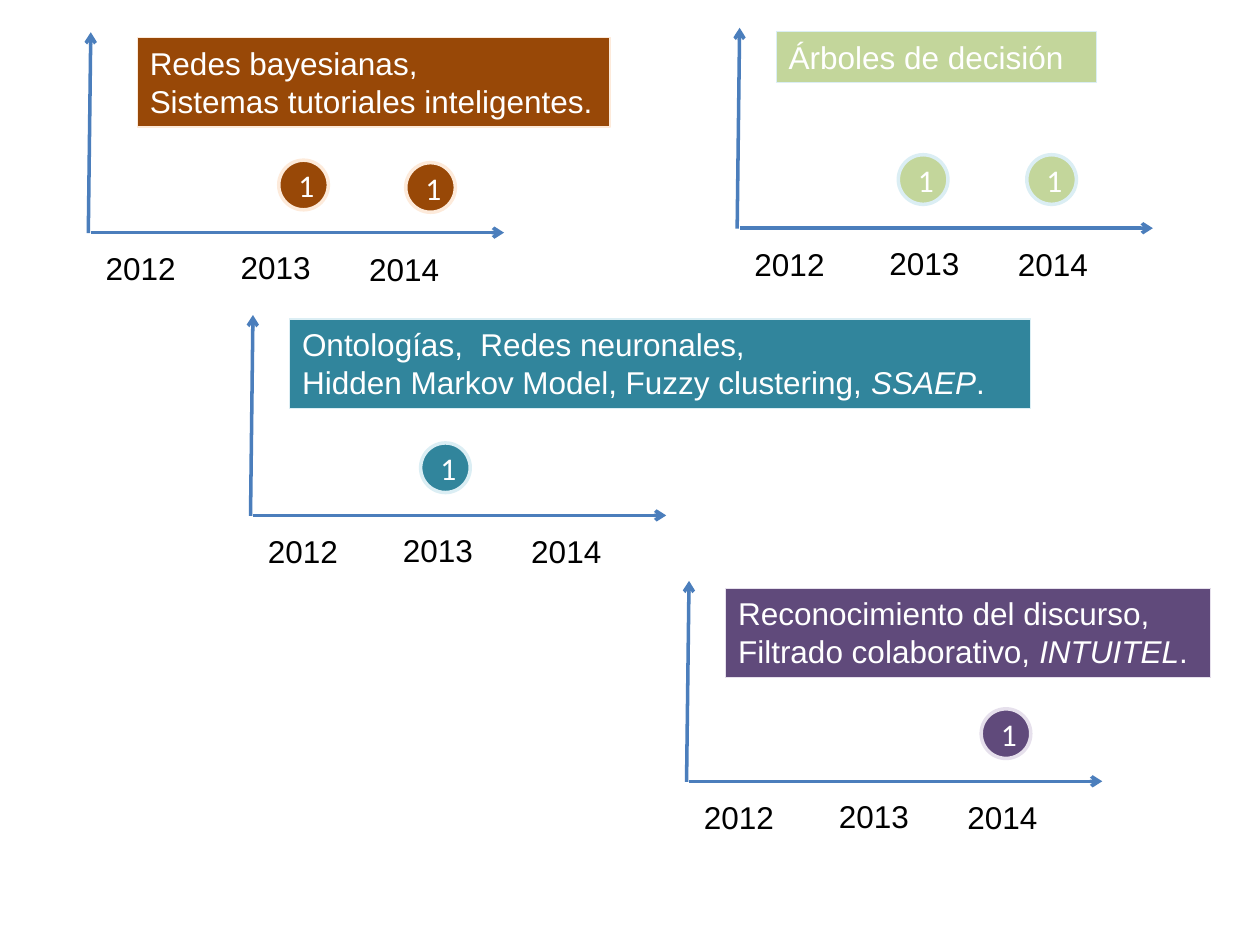
import dataclasses

import pptx
import pptx.dml.color
import pptx.enum.shapes
import pptx.enum.text
import pptx.oxml
import pptx.oxml.ns
import pptx.util

Cm = pptx.util.Cm
Pt = pptx.util.Pt
RGB = pptx.dml.color.RGBColor.from_string
SHAPE = pptx.enum.shapes.MSO_SHAPE
ALIGN = pptx.enum.text.PP_ALIGN
ANCHOR = pptx.enum.text.MSO_ANCHOR


@dataclasses.dataclass(frozen=True)
class Theme:
    axis: str = "4B7EBC"
    ink: str = "000000"
    white: str = "FFFFFF"
    brown: tuple = ("984807", "FDEADA")  # fill, border
    purple: tuple = ("604A7B", "E6E0EC")
    teal: tuple = ("31859C", "DBEEF4")
    green: tuple = ("C3D69B", "DBEEF4")
    font: str = "Arial"
    digit: str = "Calibri"
    size: int = 18
    thick: float = 2
    thin: float = 0.75


THEME = Theme()

# Year labels: offset from the origin of the axes, in cm
YEARS = [("2012", 0.1, 0.2), ("2013", 2.82, 0.18), ("2014", 5.41, 0.21)]

# One entry per plot: origin, title offset and size, dot offsets (cm).
# Each title line is a tuple of runs; every second run is italic.
PLOTS = [
    dict(at=(1.78, 4.7), tone=THEME.brown, shift=(0.99, -3.94),
         size=(9.53, 1.8), wrap=True, dots=[(3.84, -1.47), (6.4, -1.42)],
         lines=[("Redes bayesianas,",),
                ("Sistemas tutoriales inteligentes.",)]),
    dict(at=(13.84, 15.76), tone=THEME.purple, shift=(0.79, -3.9),
         size=(9.78, 1.8), wrap=False, dots=[(5.94, -1.47)],
         lines=[("Reconocimiento del discurso,",),
                ("Filtrado colaborativo, ", "INTUITEL", ".")]),
    dict(at=(5.05, 10.4), tone=THEME.teal, shift=(0.79, -3.97),
         size=(14.94, 1.8), wrap=False, dots=[(3.43, -1.47)],
         lines=[("Ontologías,  Redes neuronales,",),
                ("Hidden Markov Model, Fuzzy clustering, ", "SSAEP", ".")]),
    dict(at=(14.86, 4.61), tone=THEME.green, shift=(0.79, -3.97),
         size=(6.45, 1.02), wrap=False, dots=[(3.25, -1.49), (5.84, -1.49)],
         lines=[("Árboles de decisión",)]),
]


def write(frame, lines, font=THEME.font, color=THEME.white,
          align=ALIGN.LEFT, anchor=ANCHOR.TOP, wrap=True):
    frame.word_wrap = wrap
    frame.vertical_anchor = anchor
    for i, runs in enumerate(lines):
        para = frame.paragraphs[0] if i == 0 else frame.add_paragraph()
        para.alignment = align
        for j, text in enumerate(runs):
            run = para.add_run()
            run.text = text
            run.font.name = font
            run.font.size = Pt(THEME.size)
            run.font.color.rgb = RGB(color)
            run.font.italic = j % 2 == 1


def arrow(slide, x1, y1, x2, y2):
    line = slide.shapes.add_connector(
        pptx.enum.shapes.MSO_CONNECTOR.STRAIGHT,
        Cm(x1), Cm(y1), Cm(x2), Cm(y2))
    line.line.color.rgb = RGB(THEME.axis)
    line.line.width = Pt(THEME.thick)
    tip = pptx.oxml.parse_xml(
        f'<a:tailEnd {pptx.oxml.ns.nsdecls("a")} type="arrow"/>')
    line.line._get_or_add_ln().append(tip)
    flat = pptx.oxml.parse_xml(
        f'<a:effectLst {pptx.oxml.ns.nsdecls("a")}/>')
    line._element.spPr.append(flat)


def block(slide, kind, x, y, w, h, tone, width):
    shape = slide.shapes.add_shape(kind, Cm(x), Cm(y), Cm(w), Cm(h))
    shape.shadow.inherit = False
    shape.fill.solid()
    shape.fill.fore_color.rgb = RGB(tone[0])
    shape.line.color.rgb = RGB(tone[1])
    shape.line.width = Pt(width)
    return shape.text_frame


def plot(slide, at, tone, shift, size, wrap, dots, lines):
    x, y = at
    # Axes
    arrow(slide, x, y, x + 0.05, y - 4.05)
    arrow(slide, x + 0.05, y - 0.01, x + 8.38, y - 0.01)
    # Years
    for year, dx, dy in YEARS:
        box = slide.shapes.add_textbox(
            Cm(x + dx), Cm(y + dy), Cm(1.93), Cm(1.02))
        write(box.text_frame, [(year,)], color=THEME.ink, wrap=False)
    # Title
    frame = block(slide, SHAPE.RECTANGLE, x + shift[0], y + shift[1],
                  *size, tone, THEME.thin)
    write(frame, lines, wrap=wrap)
    # Counts
    for dx, dy in dots:
        frame = block(slide, SHAPE.OVAL, x + dx, y + dy, 1, 1,
                      tone, THEME.thick)
        write(frame, [("1",)], font=THEME.digit,
              align=ALIGN.CENTER, anchor=ANCHOR.MIDDLE)


def main():
    deck = pptx.Presentation()
    deck.slide_width, deck.slide_height = Cm(25.4), Cm(19.05)
    slide = deck.slides.add_slide(deck.slide_layouts[6])
    for item in PLOTS:
        plot(slide, **item)
    deck.save("out.pptx")


if __name__ == "__main__":
    main()
